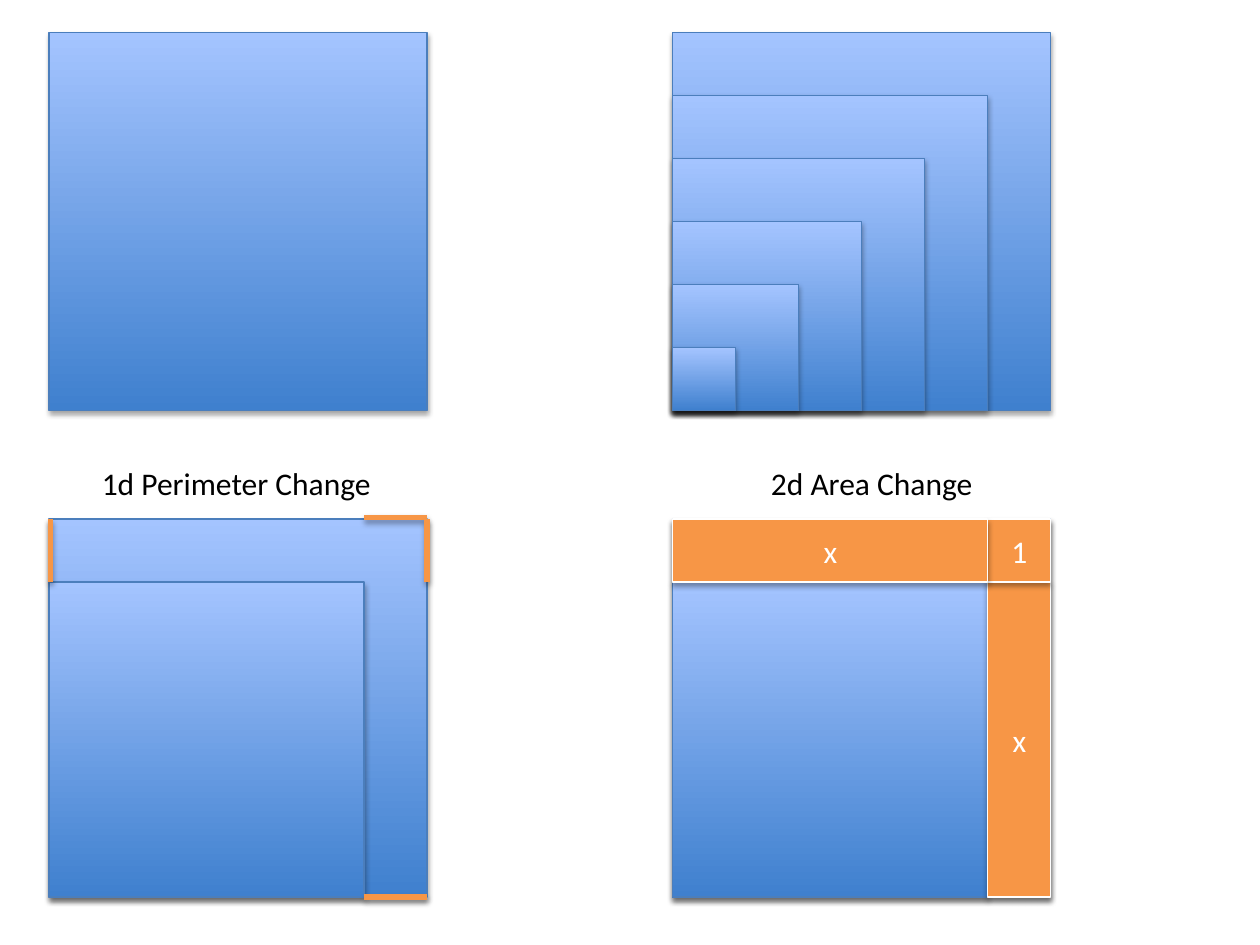
from lxml import etree
from pptx import Presentation
from pptx import util as u
from pptx.dml.color import RGBColor
from pptx.enum import shapes, text
from pptx.oxml import ns

BLUE_EDGE, BLUE_LOW, BLUE_HIGH = "4B7EBC", "3F80CE", "A4C4FF"
ORANGE, WHITE, BLACK = "F79646", "FFFFFF", "000000"
SIDE, STEP = 3, 0.5
INNER = SIDE - STEP
LEFT, RIGHT, TOP, BOTTOM = 0.39, 5.34, 0.26, 4.12


def rgb(value):
    return RGBColor.from_string(value)


def write(frame, content, size=18, font="Calibri", color=BLACK, align=None):
    paragraph = frame.paragraphs[0]
    paragraph.alignment = align
    run = paragraph.add_run()
    run.text = content
    run.font.size = u.Pt(size)
    run.font.name = font
    run.font.color.rgb = rgb(color)


class Board:
    def __init__(self, slide):
        self.slide = slide

    def shade(self, item):
        effects = etree.SubElement(item._element.spPr, ns.qn("a:effectLst"))
        shadow = etree.SubElement(
            effects, ns.qn("a:outerShdw"), blurRad=str(u.Pt(3.1)),
            dist=str(u.Pt(1.8)), dir="5400000", rotWithShape="0")
        color = etree.SubElement(shadow, ns.qn("a:srgbClr"), val=BLACK)
        etree.SubElement(color, ns.qn("a:alpha"), val="35000")

    def rectangle(self, parent, left, top, width, height, edge):
        box = parent.add_shape(
            shapes.MSO_SHAPE.RECTANGLE, u.Inches(left), u.Inches(top),
            u.Inches(width), u.Inches(height))
        box.line.color.rgb = rgb(edge)
        box.line.width = u.Pt(0.75)
        return box

    def square(self, left, top, side, parent=None):
        square = self.rectangle(
            parent or self.slide.shapes, left, top, side, side, BLUE_EDGE)
        square.fill.gradient()
        square.fill.gradient_angle = 90
        for stop, color in zip(square.fill.gradient_stops, (BLUE_LOW, BLUE_HIGH)):
            stop.color.rgb = rgb(color)
        self.shade(square)

    def strip(self, left, top, width, height, content):
        strip = self.rectangle(
            self.slide.shapes, left, top, width, height, WHITE)
        strip.fill.solid()
        strip.fill.fore_color.rgb = rgb(ORANGE)
        self.shade(strip)
        strip.text_frame.vertical_anchor = text.MSO_ANCHOR.MIDDLE
        write(strip.text_frame, content, color=WHITE, align=text.PP_ALIGN.CENTER)

    def edge(self, x1, y1, x2, y2):
        edge = self.slide.shapes.add_connector(
            shapes.MSO_CONNECTOR.STRAIGHT, u.Inches(x1), u.Inches(y1),
            u.Inches(x2), u.Inches(y2))
        edge.line.color.rgb = rgb(ORANGE)
        edge.line.width = u.Pt(3)
        self.shade(edge)

    def caption(self, left, top, width, content):
        caption = self.slide.shapes.add_textbox(
            u.Inches(left), u.Inches(top), u.Inches(width), u.Inches(0.4))
        caption.text_frame.word_wrap = False
        caption.text_frame.auto_size = text.MSO_AUTO_SIZE.SHAPE_TO_FIT_TEXT
        write(caption.text_frame, content)


def main():
    deck = Presentation()
    deck.slide_width, deck.slide_height = u.Inches(10), u.Inches(7.5)
    board = Board(deck.slides.add_slide(deck.slide_layouts[6]))

    board.square(LEFT, TOP, SIDE)

    board.square(RIGHT, BOTTOM, SIDE)
    board.square(RIGHT, BOTTOM + STEP, INNER)
    board.strip(RIGHT + INNER, BOTTOM + STEP, STEP, INNER, "x")
    board.strip(RIGHT + INNER, BOTTOM, STEP, STEP, "1")
    board.strip(RIGHT, BOTTOM, INNER, STEP, "x")

    board.square(LEFT, BOTTOM, SIDE)
    board.square(LEFT, BOTTOM + STEP, INNER)
    for y in (BOTTOM + SIDE, BOTTOM - 0.01):
        board.edge(LEFT + INNER, y, LEFT + SIDE, y)
    for x in (LEFT + SIDE, LEFT + 0.01):
        board.edge(x, BOTTOM + STEP, x, BOTTOM)

    board.caption(0.71, 3.63, 2.37, "1d Perimeter Change")
    board.caption(6.02, 3.63, 1.82, "2d Area Change")

    nest = board.slide.shapes.add_group_shape().shapes
    for count in range(6, 0, -1):
        side = count * STEP
        board.square(RIGHT, TOP + SIDE - side, side, nest)

    deck.save("out.pptx")


if __name__ == "__main__":
    main()
